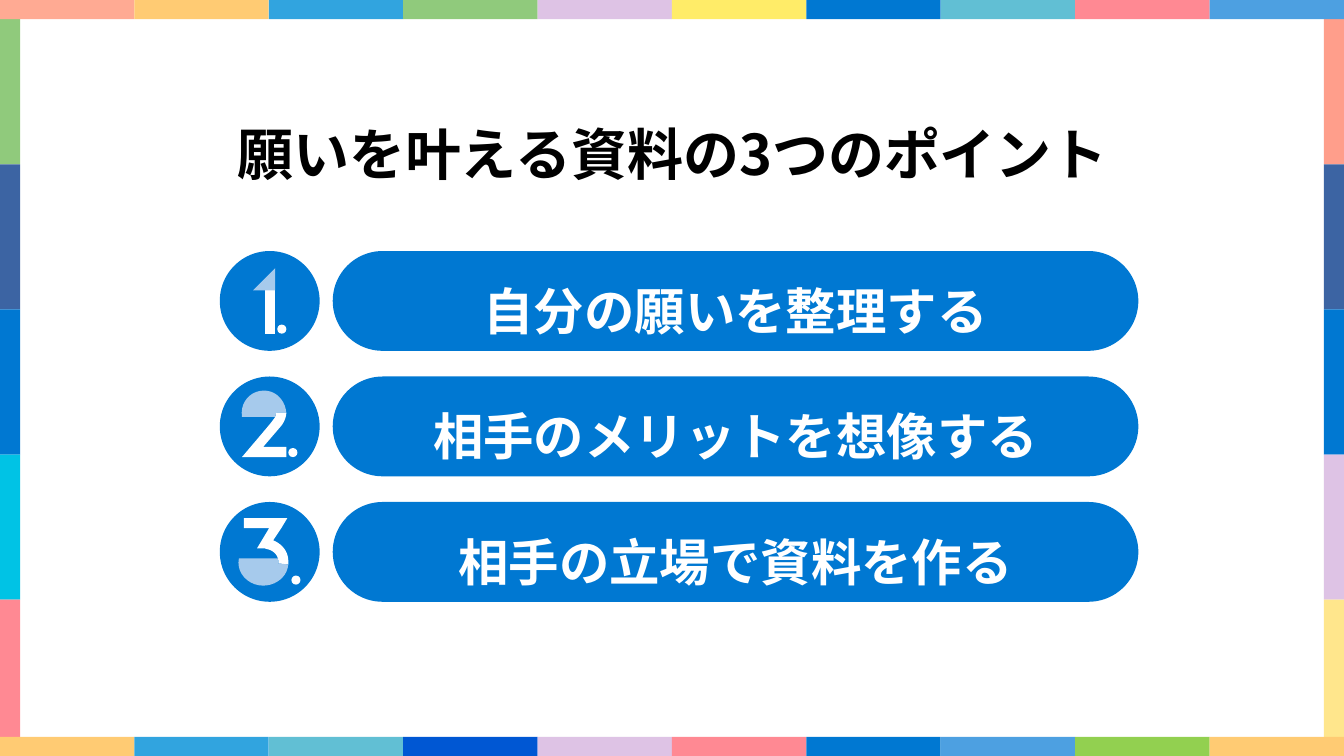
from lxml import etree
from pptx import Presentation
from pptx.dml.color import RGBColor
from pptx.enum import shapes as kinds, text as layout
from pptx.oxml import ns
from pptx.util import Inches, Pt

FONT = "Noto Sans CJK JP"
BLUE, PALE, WHITE, BLACK = "0078D2", "A6CAEC", "FFFFFF", "000000"
WIDTH, HEIGHT, BAND = 13.33, 7.5, 0.19
TOP = "FFAA93 FFCB73 31A4DF 90CA7C DEC3E5 FFEC68 0078D2 61BFD4 FF8993 4DA0E1".split()
BOTTOM = "FFCB73 31A4DF 61BFD4 0057D3 DEC3E5 FF8993 0078D2 4DA0E1 92D050 FFCB73".split()
LEFT = "90CA7C 3C64A3 0078D2 00C3E5 FF8993".split()
RIGHT = "FF9E8B 3C64A3 0078D2 DEC3E5 FFE68C".split()

POINTS = ["自分の願いを整理する", "相手のメリットを想像する", "相手の立場で資料を作る"]

# Pairs are corners; sextuples are Bézier curves, both in inches from the disc's corner.
NUMERALS = [
    {
        "dot": (0.57, 0.73),
        "parts": [
            (WHITE, [(0.45, 0.39), (0.55, 0.39), (0.55, 0.82), (0.45, 0.82)]),
            (PALE, [(0.55, 0.17), (0.55, 0.39), (0.33, 0.39)]),
        ],
    },
    {
        "dot": (0.68, 0.71),
        "parts": [
            (PALE, [(0.56, 0.36), (0.55, 0.4), (0.22, 0.4),
                    (0.2, 0.26, 0.3, 0.14, 0.44, 0.14),
                    (0.56, 0.14, 0.65, 0.24, 0.66, 0.36)]),
            (WHITE, [(0.43, 0.7), (0.66, 0.7), (0.66, 0.8), (0.22, 0.8),
                     (0.22, 0.8, 0.52, 0.45, 0.53, 0.43),
                     (0.55, 0.41, 0.56, 0.38, 0.56, 0.36), (0.66, 0.36),
                     (0.66, 0.4, 0.64, 0.45, 0.61, 0.49)]),
        ],
    },
    {
        "dot": (0.71, 0.73),
        "parts": [
            (WHITE, [(0.68, 0.59), (0.68, 0.49, 0.62, 0.42, 0.53, 0.38),
                     (0.61, 0.26), (0.67, 0.16), (0.24, 0.16), (0.24, 0.26),
                     (0.49, 0.26), (0.37, 0.46), (0.44, 0.46),
                     (0.45, 0.46, 0.47, 0.47, 0.48, 0.47),
                     (0.55, 0.49, 0.59, 0.55, 0.58, 0.61), (0.68, 0.62)]),
            (PALE, [(0.68, 0.62), (0.67, 0.74, 0.56, 0.83, 0.43, 0.83),
                    (0.28, 0.83, 0.16, 0.7, 0.19, 0.56), (0.58, 0.56), (0.58, 0.61)]),
        ],
    },
]


def color(value):
    return RGBColor.from_string(value)


def paint(shape, fill):
    shape.shadow.inherit = False
    shape.fill.solid()
    shape.fill.fore_color.rgb = color(fill)
    shape.line.fill.background()
    return shape


def add_preset(shapes, preset, box, fill):
    return paint(shapes.add_shape(preset, *map(Inches, box)), fill)


def write(paragraph, words, size, ink, spacing):
    paragraph.alignment = layout.PP_ALIGN.CENTER
    paragraph.line_spacing = spacing
    run = paragraph.add_run()
    run.text = words
    run.font.name = FONT
    run.font.size = Pt(size)
    run.font.bold = True
    run.font.color.rgb = color(ink)
    etree.SubElement(run.font._element, ns.qn("a:ea"), typeface=FONT)


def flatten(outline, steps=10):
    corners = []
    for node in outline:
        if len(node) == 2:
            corners.append(node)
            continue
        curve = [corners[-1], node[:2], node[2:4], node[4:]]
        for step in range(1, steps + 1):
            t = step / steps
            weights = ((1 - t) ** 3, 3 * t * (1 - t) ** 2, 3 * t * t * (1 - t), t ** 3)
            corners.append(tuple(sum(w * p[axis] for w, p in zip(weights, curve))
                                 for axis in (0, 1)))
    return corners


def add_border(slide, left, top, width, height):
    rectangle = kinds.MSO_SHAPE.RECTANGLE
    side = 1.44
    for x, fills in ((left, LEFT), (left + width - 0.2, RIGHT)):
        for i, fill in enumerate(fills):
            add_preset(slide.shapes, rectangle, (x, top + BAND + i * side, 0.2, side), fill)
    cell = width / len(TOP)
    for y, fills in ((top, TOP), (top + height - BAND, BOTTOM)):
        for i, fill in enumerate(fills):
            add_preset(slide.shapes, rectangle, (left + i * cell, y, cell, BAND), fill)


def add_heading(slide, left, top, width, height):
    heading = slide.shapes.title
    heading.left, heading.top = Inches(left), Inches(top)
    heading.width, heading.height = Inches(width), Inches(height)
    frame = heading.text_frame
    frame.word_wrap = True
    frame.auto_size = layout.MSO_AUTO_SIZE.SHAPE_TO_FIT_TEXT
    frame.vertical_anchor = layout.MSO_ANCHOR.TOP
    write(frame.paragraphs[0], "願いを叶える資料の3つのポイント", 40, BLACK, 0.9)


def add_numeral(slide, left, top, numeral):
    group = slide.shapes.add_group_shape()
    for fill, outline in numeral["parts"]:
        corners = [(Inches(left + x), Inches(top + y)) for x, y in flatten(outline)]
        builder = group.shapes.build_freeform(*corners[0])
        builder.add_line_segments(corners[1:], close=True)
        paint(builder.convert_to_shape(), fill)
    x, y = numeral["dot"]
    add_preset(group.shapes, kinds.MSO_SHAPE.OVAL, (left + x, top + y, 0.09, 0.09), WHITE)


def add_point(slide, left, top, width, height, words, numeral):
    indent = 1.12
    rounded = kinds.MSO_SHAPE.ROUNDED_RECTANGLE
    pill = add_preset(slide.shapes, rounded,
                      (left + indent, top, width - indent, height), BLUE)
    disc = add_preset(slide.shapes, rounded, (left, top, height, height), BLUE)
    for shape in (pill, disc):
        shape.adjustments[0] = 0.5
    pill.text_frame.word_wrap = True
    pill.text_frame.vertical_anchor = layout.MSO_ANCHOR.MIDDLE
    write(pill.text_frame.paragraphs[0], words, 36, WHITE, 1.3)
    add_numeral(slide, left, top, numeral)


def add_points(slide, left, top, width, height):
    row = 0.99
    pitch = (height - row) / (len(POINTS) - 1)
    for i, (words, numeral) in enumerate(zip(POINTS, NUMERALS)):
        add_point(slide, left, top + i * pitch, width, row, words, numeral)


def main():
    deck = Presentation()
    deck.slide_width, deck.slide_height = Inches(WIDTH), Inches(HEIGHT)
    slide = deck.slides.add_slide(deck.slide_layouts[5])
    add_border(slide, 0, 0, WIDTH, HEIGHT)
    add_heading(slide, 1.85, 1.21, 9.64, 0.77)
    add_points(slide, 2.18, 2.49, 9.11, 3.48)
    deck.save("out.pptx")


if __name__ == "__main__":
    main()
